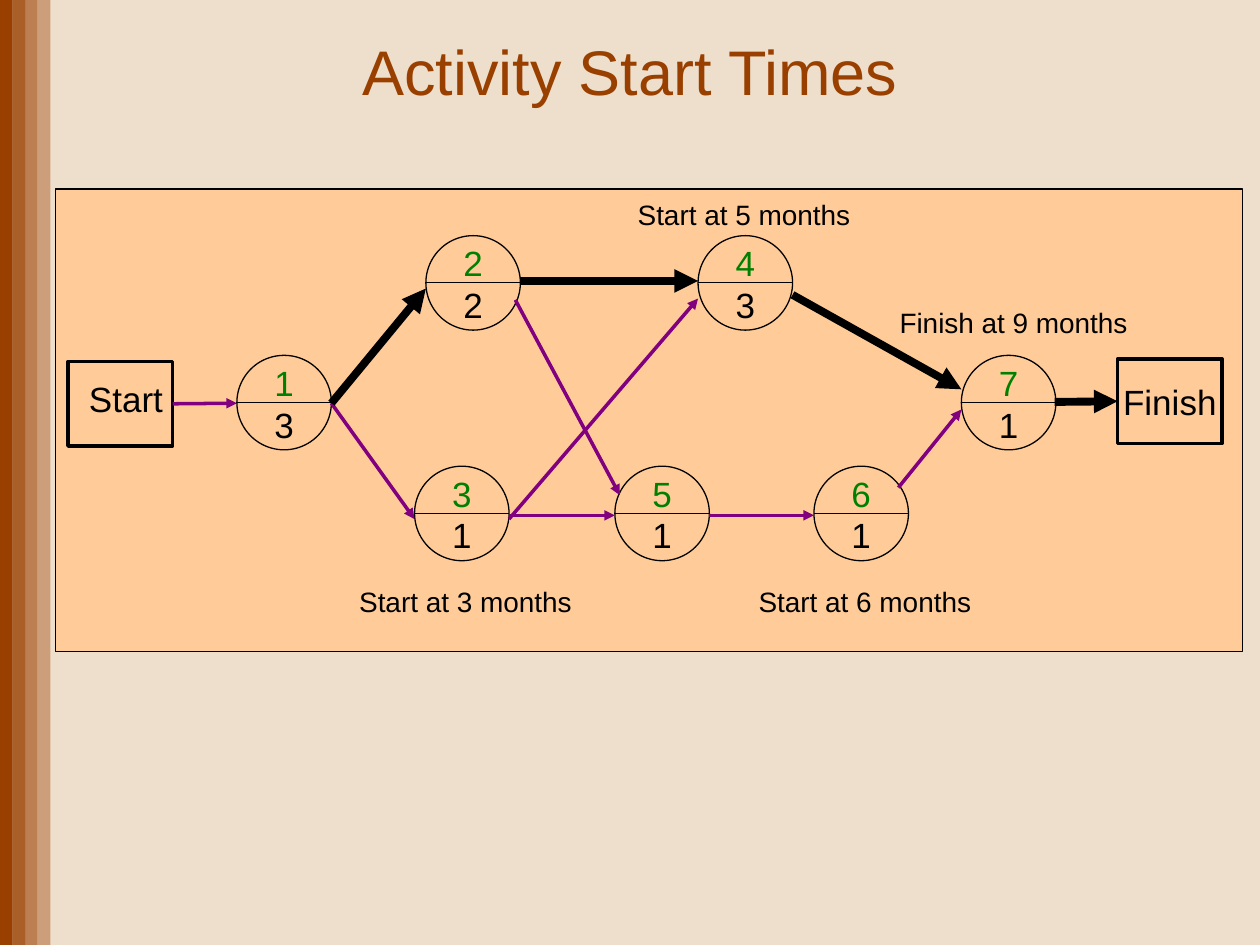
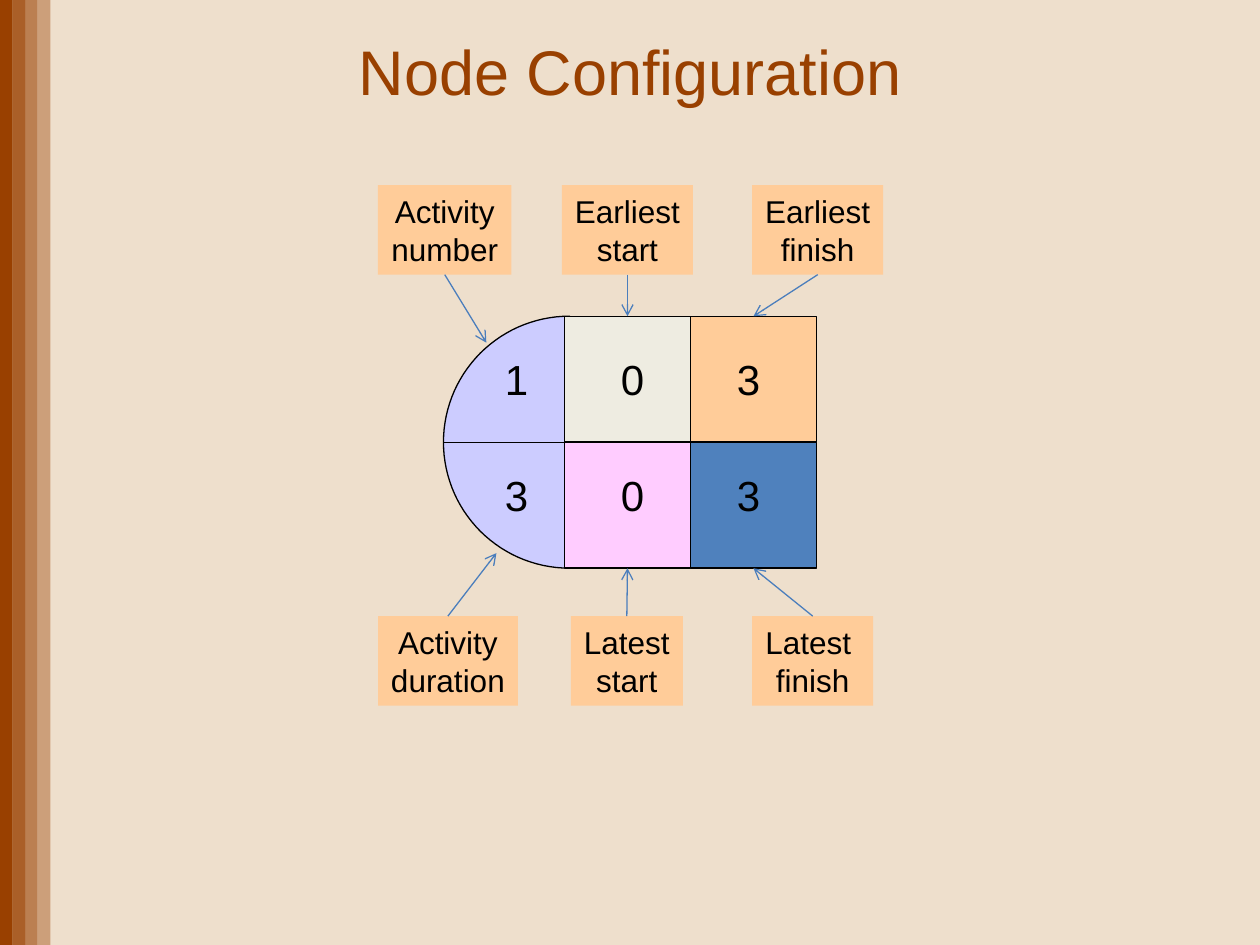
from math import cos, pi, sin

from lxml.etree import SubElement
from pptx import Presentation
from pptx.dml.color import RGBColor
from pptx.enum.shapes import MSO_CONNECTOR, MSO_SHAPE
from pptx.enum.text import MSO_ANCHOR, PP_ALIGN
from pptx.oxml.ns import qn
from pptx.util import Inches, Pt

COLORS = {
    "background": "EEDFCC",
    "brown": "994000",
    "peach": "FFCC99",
    "black": "000000",
    "green": "008000",
    "purple": "800080",
    "lavender": "CCCCFF",
    "cream": "EEECE1",
    "pink": "FFCCFF",
    "blue": "4F81BD",
    "arrow_blue": "4B7EBC",
}
COLORS = {name: RGBColor.from_string(value) for name, value in COLORS.items()}
FONT = "Arial"


def add_box(page, kind, place, fill=None, line_width=0, text="", size=20,
            color="black", wrap=True):
    """Add a preset shape, or a plain text box when kind is None."""
    place = [Inches(value) for value in place]
    if kind is None:
        box = page.shapes.add_textbox(*place)
    else:
        box = page.shapes.add_shape(kind, *place)
        box.shadow.inherit = False
        box.fill.solid()
        box.fill.fore_color.rgb = COLORS[fill]
        if line_width:
            box.line.color.rgb = COLORS["black"]
            box.line.width = Pt(line_width)
        else:
            box.line.fill.background()
    if text:
        box.text_frame.word_wrap = wrap
        paragraph = box.text_frame.paragraphs[0]
        paragraph.text = text
        paragraph.alignment = PP_ALIGN.CENTER
        paragraph.font.name = FONT
        paragraph.font.size = Pt(size)
        paragraph.font.color.rgb = COLORS[color]
    return box


def add_line(page, start, end, color="black", width=0.75, head=None):
    """Add a straight connector, with an arrowhead at its end if one is named."""
    points = [Inches(value) for value in (*start, *end)]
    line = page.shapes.add_connector(MSO_CONNECTOR.STRAIGHT, *points)
    line.line.color.rgb = COLORS[color]
    line.line.width = Pt(width)
    if head:
        SubElement(line.line._get_or_add_ln(), qn("a:tailEnd"), type=head)
    SubElement(line._element.spPr, qn("a:effectLst"))
    return line


deck = Presentation()
deck.slide_width, deck.slide_height = Inches(10), Inches(7.5)
master = deck.slide_master
master.background.fill.solid()
master.background.fill.fore_color.rgb = COLORS["background"]

# Pages and their titles
pages = []
for heading in ("Activity Start Times", "Node Configuration"):
    page = deck.slides.add_slide(deck.slide_layouts[5])
    title = page.shapes.title
    title.left, title.top = Inches(0.5), Inches(0.04)
    title.width, title.height = Inches(9), Inches(1.03)
    title.text_frame.vertical_anchor = MSO_ANCHOR.MIDDLE
    paragraph = title.text_frame.paragraphs[0]
    paragraph.text = heading
    paragraph.alignment = PP_ALIGN.CENTER
    paragraph.font.name = FONT
    paragraph.font.size = Pt(36)
    paragraph.font.color.rgb = COLORS["brown"]
    pages.append(page)
network_page, node_page = pages

# Fading bands at the left edge, moved to the master
for index, opacity in enumerate((100, 80, 60, 40)):
    band = add_box(network_page, MSO_SHAPE.RECTANGLE,
                   (0.1 * index, 0, 0.1, 7.5), "brown")
    shade = band._element.spPr.find(".//" + qn("a:srgbClr"))
    SubElement(shade, qn("a:alpha"), val=str(opacity * 1000))
    band._element.nvSpPr.cNvPr.set("id", str(20 + index))
    master.shapes._spTree.insert(2 + index, band._element)

# Activity network: panel
add_box(network_page, MSO_SHAPE.RECTANGLE, (0.44, 1.5, 9.42, 3.67), "peach", 0.75)

# Activity network: circles with number above duration
CIRCLE = 0.75
activities = [  # number, duration, left, top
    (1, 3, 1.88, 2.82),
    (2, 2, 3.38, 1.87),
    (4, 3, 5.54, 1.87),
    (3, 1, 3.29, 3.7),
    (5, 1, 4.88, 3.7),
    (6, 1, 6.46, 3.7),
    (7, 1, 7.63, 2.82),
]
for number, duration, left, top in activities:
    add_box(network_page, MSO_SHAPE.OVAL, (left, top, CIRCLE, CIRCLE), "peach", 0.75)
    middle = top + CIRCLE / 2
    add_line(network_page, (left, middle), (left + CIRCLE, middle))
    for value, offset, color in ((number, 0, "green"), (duration, 0.33, "black")):
        add_box(network_page, None, (left + 0.165, top + offset, 0.42, 0.43),
                text=str(value), color=color)

# Activity network: start and finish
start_box = add_box(network_page, MSO_SHAPE.RECTANGLE,
                    (0.54, 2.87, 0.83, 0.67), "peach", 2)
add_box(network_page, None, (0.54, 2.95, 0.92, 0.43), text="Start")
finish_box = add_box(network_page, MSO_SHAPE.RECTANGLE, (8.87, 2.85, 0.83, 0.67),
                     "peach", 2, "Finish", wrap=False)

# Activity network: ordinary arrows, then the heavy critical path
ordinary_arrows = [
    ((1.38, 3.2), (1.88, 3.2)),
    ((2.63, 3.2), (3.29, 4.12)),
    ((4.04, 4.12), (5.54, 2.37)),
    ((4.09, 2.38), (4.92, 3.93)),
    ((4.04, 4.09), (4.88, 4.09)),
    ((7.13, 3.87), (7.63, 3.25)),
    ((5.63, 4.09), (6.46, 4.09)),
]
critical_arrows = [
    ((2.63, 3.2), (3.38, 2.29)),
    ((4.13, 2.23), (5.54, 2.23)),
    ((6.29, 2.34), (7.63, 3.09)),
    ((8.37, 3.19), (8.87, 3.19)),
]
ordinary = [add_line(network_page, *ends, "purple", 2, "triangle")
            for ends in ordinary_arrows]
critical = [add_line(network_page, *ends, "black", 4.5, "triangle")
            for ends in critical_arrows]
ordinary[0].begin_connect(start_box, 3)
critical[-1].end_connect(finish_box, 1)

# Activity network: time notes
for note, left, top in (
    ("Start at 3 months", 2.61, 4.59),
    ("Start at 6 months", 5.78, 4.59),
    ("Start at 5 months", 4.82, 1.52),
    ("Finish at 9 months", 6.96, 2.38),
):
    add_box(network_page, None, (left, top, 2.17, 0.37), text=note, size=16)

# Node: half disc on the left
STEPS = 60
arc = [(Inches(4.52 - sin(pi * step / STEPS)), Inches(3.51 - cos(pi * step / STEPS)))
       for step in range(STEPS + 1)]
builder = node_page.shapes.build_freeform(*arc[0])
builder.add_line_segments(arc[1:], close=True)
half_disc = builder.convert_to_shape()
half_disc.shadow.inherit = False
half_disc.fill.solid()
half_disc.fill.fore_color.rgb = COLORS["lavender"]
half_disc.line.color.rgb = COLORS["black"]
half_disc.line.width = Pt(0.75)

# Node: square cells, keyed by row and column
cells = {}
for row, fills in enumerate((("cream", "peach"), ("pink", "blue"))):
    for column, fill in enumerate(fills):
        cells[row, column] = add_box(node_page, MSO_SHAPE.RECTANGLE,
                                     (4.48 + column, 2.51 + row, 1, 1), fill, 0.75)
add_line(node_page, (4.6, 3.51), (3.52, 3.51))

# Node: values
for row, values in enumerate(("103", "303")):
    for column, value in enumerate(values):
        add_box(node_page, None, (3.89 + 0.92 * column, 2.76 + 0.92 * row, 0.42, 0.5),
                text=value, size=24)

# Node: labels with arrows to the part they name
labels = [  # text, left, width, row, arrow end, cell column
    ("Activity\nnumber", 3, 1.06, 0, (3.86, 2.72), None),
    ("Earliest\nstart", 4.46, 1.04, 0, (4.98, 2.51), 0),
    ("Earliest\nfinish", 5.97, 1.04, 0, (5.98, 2.51), 1),
    ("Activity\nduration", 3, 1.11, 1, (3.94, 4.39), None),
    ("Latest\nstart", 4.53, 0.89, 1, (4.98, 4.51), 0),
    ("Latest \nfinish", 5.97, 0.96, 1, (5.98, 4.51), 1),
]
for text, left, width, row, target, column in labels:
    top, edge = ((1.47, 2.18), (4.89, 4.89))[row]
    label = add_box(node_page, MSO_SHAPE.RECTANGLE, (left, top, width, 0.71),
                    "peach", text=text, size=18, wrap=False)
    arrow = add_line(node_page, (left + width / 2, edge), target,
                     "arrow_blue", head="arrow")
    arrow.begin_connect(label, (2, 0)[row])
    if column is not None:
        arrow.end_connect(cells[row, column], (0, 2)[row])

deck.save("out.pptx")
